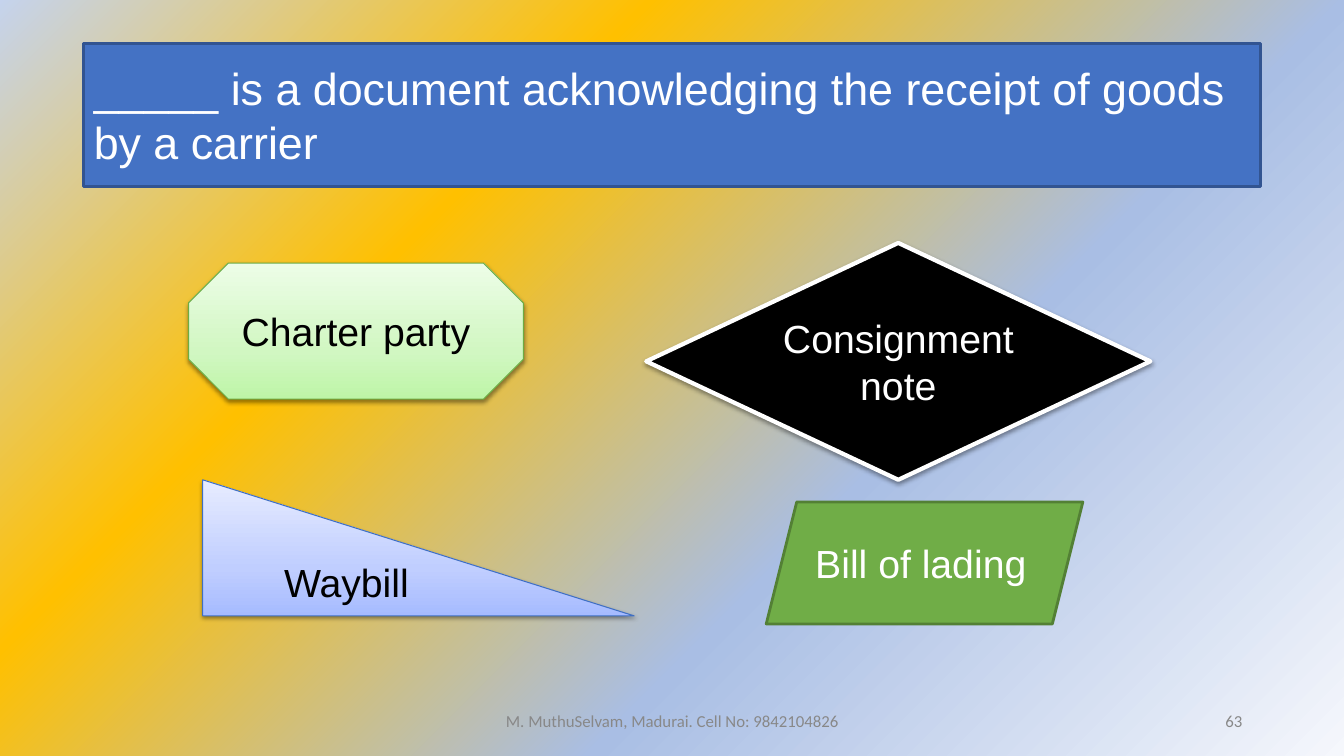
from lxml import etree
from pptx import Presentation
from pptx.dml.color import RGBColor
from pptx.enum.shapes import MSO_SHAPE as Preset
from pptx.enum.text import MSO_ANCHOR as Anchor, MSO_AUTO_SIZE as AutoSize, PP_ALIGN as Align
from pptx.oxml import parse_xml
from pptx.oxml.ns import nsdecls, qn
from pptx.util import Inches, Pt

WHITE = RGBColor(0xFF, 0xFF, 0xFF)
BLACK = RGBColor(0x00, 0x00, 0x00)
GREY = RGBColor(0x88, 0x88, 0x88)
BLUE = RGBColor(0x44, 0x72, 0xC4)
DARK_BLUE = RGBColor(0x32, 0x54, 0x91)
EDGE_BLUE = RGBColor(0x3F, 0x6F, 0xC3)
GREEN = RGBColor(0x70, 0xAD, 0x47)
DARK_GREEN = RGBColor(0x53, 0x80, 0x35)
EDGE_GREEN = RGBColor(0x6D, 0xAC, 0x43)
PALE_GREENS = [(0, RGBColor(0xBE, 0xF5, 0xA7)), (35, RGBColor(0xD1, 0xF7, 0xC2)),
               (100, RGBColor(0xED, 0xFD, 0xE7))]
PALE_BLUES = [(0, RGBColor(0xA6, 0xBB, 0xFF)), (35, RGBColor(0xC0, 0xCE, 0xFF)),
              (100, RGBColor(0xE7, 0xEC, 0xFF))]
BACKDROP = [(0, RGBColor(0xF5, 0xF7, 0xFC)), (36, RGBColor(0xA9, 0xBE, 0xE4)),
            (69, RGBColor(0xFF, 0xC0, 0x00)), (100, RGBColor(0xC5, 0xD3, 0xED))]

UPWARD = '<a:lin ang="16200000" scaled="0"/>'
FROM_CORNER = '<a:path path="circle"><a:fillToRect l="100000" t="100000"/></a:path>'


def write_text(shape, text, size=28, color=WHITE, font="Arial", align=Align.LEFT):
    frame = shape.text_frame
    frame.word_wrap = True
    frame.auto_size = AutoSize.NONE
    frame.vertical_anchor = Anchor.MIDDLE
    paragraph = frame.paragraphs[0]
    paragraph.alignment = align
    run = paragraph.add_run()
    run.text = text
    run.font.size = Pt(size)
    run.font.name = font
    run.font.color.rgb = color


def set_gradient(fill, element, stops, direction):
    """Swap the solid fill of an element for a gradient with any number of stops."""
    fill.solid()
    fill.fore_color.rgb = WHITE
    stop_xml = "".join(f'<a:gs pos="{position * 1000}"><a:srgbClr val="{color}"/></a:gs>'
                       for position, color in stops)
    solid = element.find(".//" + qn("a:solidFill"))
    solid.getparent().replace(solid, parse_xml(
        f'<a:gradFill rotWithShape="1" {nsdecls("a")}><a:gsLst>{stop_xml}</a:gsLst>'
        f'{direction}</a:gradFill>'))


presentation = Presentation()
presentation.slide_width = Inches(13.33)
presentation.slide_height = Inches(7.5)
slide = presentation.slides.add_slide(presentation.slide_layouts[5])

# Background
set_gradient(slide.background.fill, slide.element, BACKDROP, FROM_CORNER)

# Question on a scroll
title = slide.shapes.title
title.left, title.top, title.width, title.height = map(Inches, (0.83, 0.43, 11.67, 1.42))
title.element.spPr.append(parse_xml(
    f'<a:prstGeom prst="horizontalScroll" {nsdecls("a")}><a:avLst/></a:prstGeom>'))
title.fill.solid()
title.fill.fore_color.rgb = BLUE
title.line.color.rgb = DARK_BLUE
title.line.width = Pt(2)
write_text(title, "_____ is a document acknowledging the receipt of goods by a carrier", size=32)

# Answers: preset, place, fill, line colour, line width, shadow, text, text colour, alignment
answers = [
    (Preset.OCTAGON, (1.87, 2.61, 3.32, 1.35), PALE_GREENS, EDGE_GREEN, 0.75, True,
     "Charter party", BLACK, Align.CENTER),
    (Preset.DIAMOND, (6.41, 2.41, 5, 2.35), BLACK, WHITE, 3, True,
     "Consignment note", WHITE, Align.CENTER),
    (Preset.RIGHT_TRIANGLE, (2.01, 4.76, 4.28, 1.35), PALE_BLUES, EDGE_BLUE, 0.75, True,
     "Waybill", BLACK, Align.CENTER),
    (Preset.PARALLELOGRAM, (7.6, 4.98, 3.14, 1.21), GREEN, DARK_GREEN, 2, False,
     "Bill of lading", WHITE, Align.LEFT),
]
for preset, place, fill, edge, width, shadowed, text, color, align in answers:
    answer = slide.shapes.add_shape(preset, *map(Inches, place))
    if isinstance(fill, list):
        set_gradient(answer.fill, answer.element.spPr, fill, UPWARD)
    else:
        answer.fill.solid()
        answer.fill.fore_color.rgb = fill
    answer.line.color.rgb = edge
    answer.line.width = Pt(width)
    answer.shadow.inherit = False
    if shadowed:
        effects = answer.element.spPr.find(qn("a:effectLst"))
        shadow = etree.SubElement(effects, qn("a:outerShdw"), blurRad=str(Pt(3.1)),
                                  dist=str(Pt(1.6)), dir="5400000", rotWithShape="0")
        shadow_color = etree.SubElement(shadow, qn("a:srgbClr"), val=str(BLACK))
        etree.SubElement(shadow_color, qn("a:alpha"), val="38000")
    write_text(answer, text, color=color, align=align)

# Footer and slide number
for left, width, text, align in [
    (4.42, 4.5, "M. MuthuSelvam, Madurai. Cell No: 9842104826", Align.CENTER),
    (9.42, 3, "63", Align.RIGHT),
]:
    box = slide.shapes.add_textbox(Inches(left), Inches(6.95), Inches(width), Inches(0.4))
    write_text(box, text, size=12, color=GREY, font="Calibri", align=align)

presentation.save("out.pptx")
